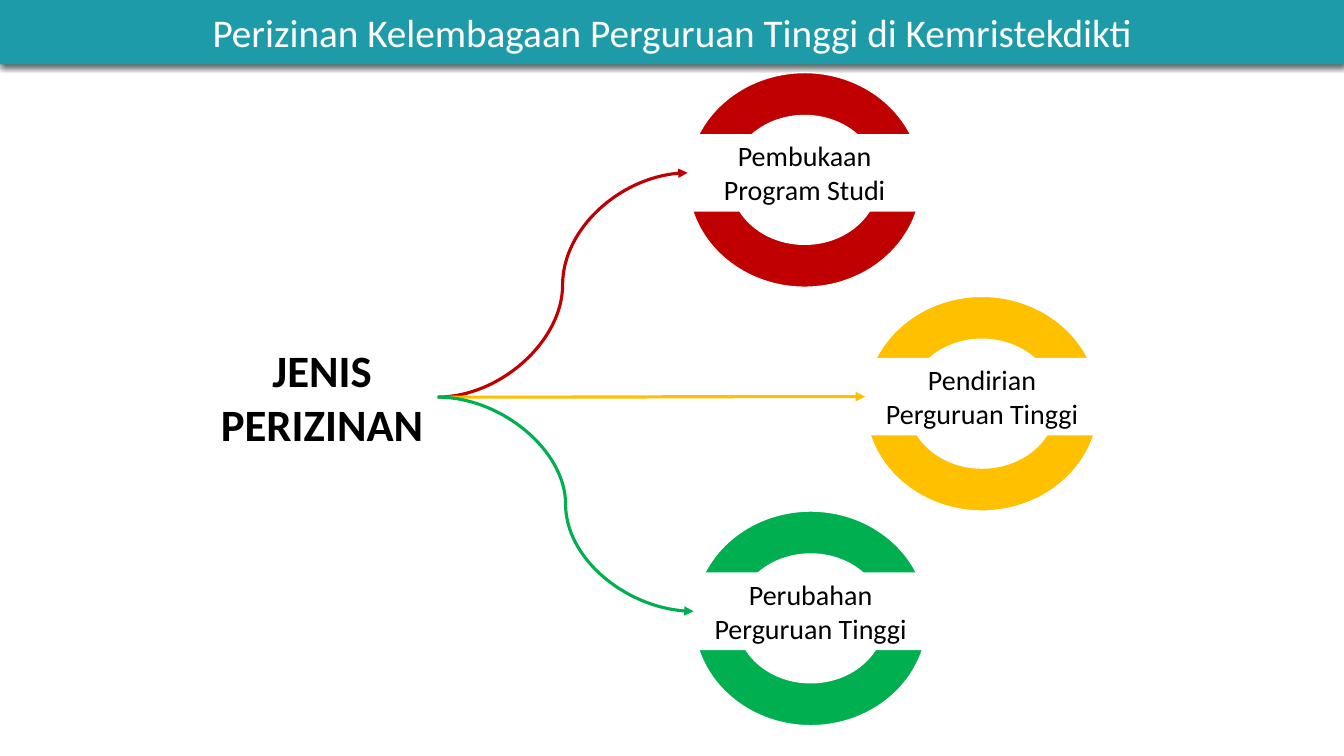
from lxml import etree
from pptx import Presentation
from pptx import util as u
from pptx.dml.color import RGBColor
from pptx.enum import shapes as sh, text as tx
from pptx.oxml import parse_xml
from pptx.oxml.ns import qn

NS = 'xmlns:a="http://schemas.openxmlformats.org/drawingml/2006/main"'
WIDE, TALL = 13.33, 7.5
RING_W, RING_H = 2.32, 2.13
TAG_H, TAG_DY = 0.77, 0.61

deck = Presentation()
deck.slide_width, deck.slide_height = u.Inches(WIDE), u.Inches(TALL)
slide = deck.slides.add_slide(deck.slide_layouts[6])


def block(kind, x, y, w, h, fill, line=None):
    item = slide.shapes.add_shape(kind, *map(u.Inches, (x, y, w, h)))
    item.shadow.inherit = False
    item.fill.solid()
    item.fill.fore_color.rgb = RGBColor.from_string(fill)
    if line:
        item.line.color.rgb = RGBColor.from_string(line)
        item.line.width = u.Pt(1)
    else:
        item.line.fill.background()
    return item


def write(item, words, size=20, color="000000", bold=False, anchor="TOP"):
    frame = item.text_frame
    frame.word_wrap = True
    frame.vertical_anchor = tx.MSO_ANCHOR[anchor]
    para = frame.paragraphs[0]
    para.alignment = tx.PP_ALIGN.CENTER
    run = para.add_run()
    run.text = words
    run.font.name, run.font.size, run.font.bold = "Calibri", u.Pt(size), bold
    run.font.color.rgb = RGBColor.from_string(color)


rect, donut = sh.MSO_SHAPE.RECTANGLE, sh.MSO_SHAPE.DONUT

# Title bar with a soft shadow below
bar = block(rect, 0, 0, WIDE, 0.64, "1E9BA8")
write(bar, "Perizinan Kelembagaan Perguruan Tinggi di Kemristekdikti",
      size=28, color="FFFFFF", anchor="MIDDLE")
glow = bar._element.spPr.find(qn("a:effectLst"))
glow.append(parse_xml(
    f'<a:outerShdw {NS} blurRad="{u.Pt(4.5)}" dist="{u.Pt(1.5)}" dir="5400000" '
    'algn="t" rotWithShape="0"><a:srgbClr val="000000">'
    '<a:alpha val="63000"/></a:srgbClr></a:outerShdw>'))

# Root of the tree
root = block(rect, 2.05, 3.35, 2.29, 1.18, "FFFFFF")
write(root, "JENIS PERIZINAN", size=32, bold=True)
root.text_frame.auto_size = tx.MSO_AUTO_SIZE.SHAPE_TO_FIT_TEXT

# Rings, each crossed by its label
kinds = [
    ("Pembukaan Program Studi", 6.82, 0.72, "C00000"),
    ("Pendirian Perguruan Tinggi", 8.58, 2.94, "FFC000"),
    ("Perubahan Perguruan Tinggi", 6.88, 5.07, "00B050"),
]
tags = []
for words, x, y, color in kinds:
    ring = block(donut, x, y, RING_W, RING_H, color, line="FFFFFF")
    ring.adjustments[0] = 0.2
    tag = block(rect, x, y + TAG_DY, RING_W, TAG_H, "FFFFFF")
    write(tag, words)
    tag.text_frame.auto_size = tx.MSO_AUTO_SIZE.SHAPE_TO_FIT_TEXT
    tags.append((tag, color))

# Curved arrows from the root to each label
for tag, color in tags:
    link = slide.shapes.add_connector(
        sh.MSO_CONNECTOR.CURVE, root.left + root.width, root.top + root.height // 2,
        tag.left, tag.top + tag.height // 2)
    link.begin_connect(root, 3)
    link.end_connect(tag, 1)
    link.line.color.rgb = RGBColor.from_string(color)
    link.line.width = u.Pt(2.25)
    etree.SubElement(link.line._get_or_add_ln(), qn("a:tailEnd"), type="triangle")
    etree.SubElement(link._element.spPr, qn("a:effectLst"))

deck.save("out.pptx")
